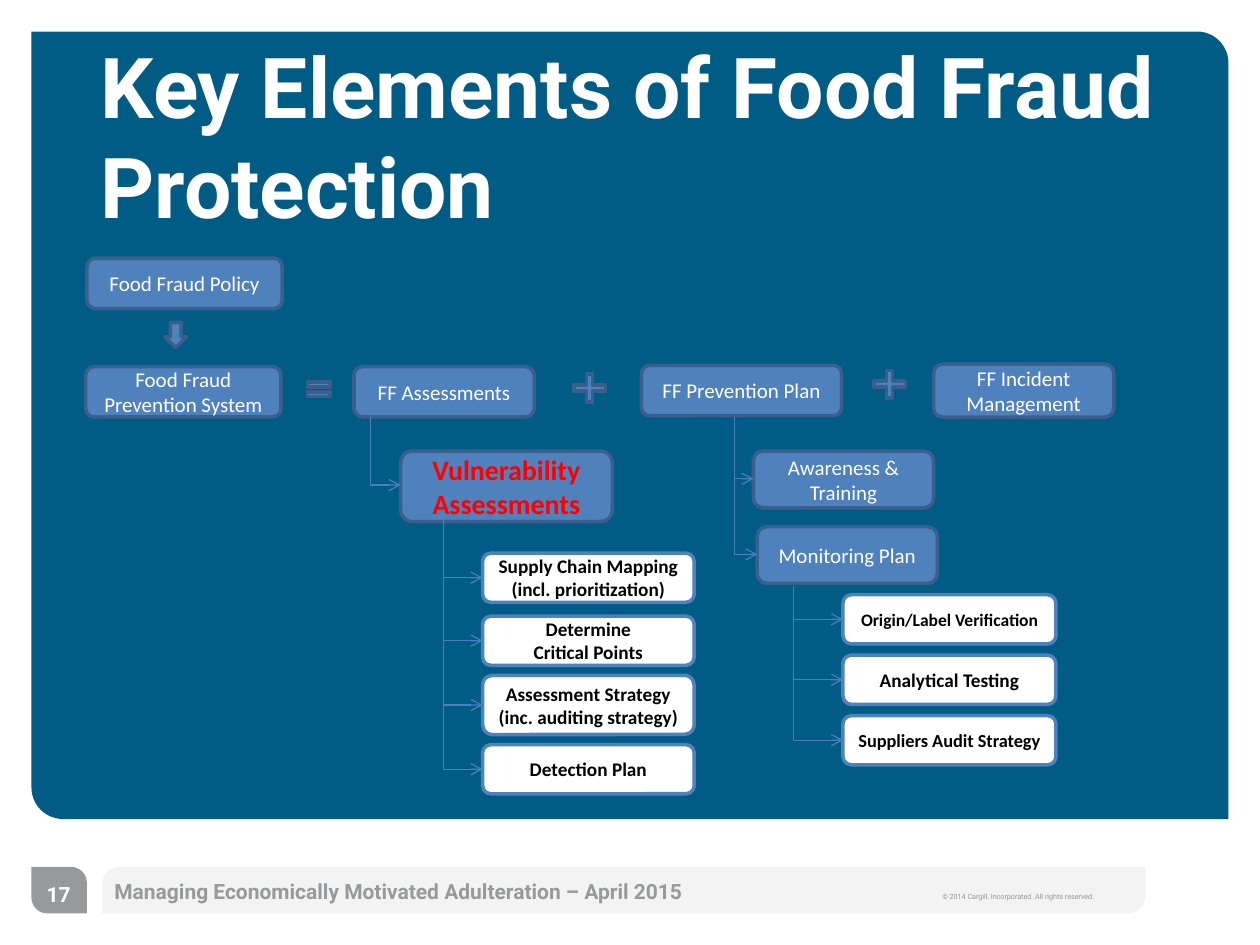
import pptx
import pptx.dml.color
import pptx.enum.shapes
import pptx.enum.text
import pptx.oxml.ns
import pptx.util
from lxml import etree
from pptx.util import Inches

SHAPE = pptx.enum.shapes.MSO_SHAPE
ALIGN = pptx.enum.text.PP_ALIGN
ANCHOR = pptx.enum.text.MSO_ANCHOR
qn = pptx.oxml.ns.qn

COLORS = {
    "panel": "005C84",
    "footer": "D0D0D0",
    "gray": "97999B",
    "copyright": "959595",
    "box": "4F81BD",
    "box_edge": "3A5F8C",
    "arrow": "4B7EBC",
    "white": "FFFFFF",
    "black": "000000",
    "red": "FF0000",
}


def rgb(name):
    return pptx.dml.color.RGBColor.from_string(COLORS[name])


def write_text(frame, text, size=12, color="white", font="Calibri", bold=False,
               align=ALIGN.CENTER, anchor=ANCHOR.MIDDLE, wrap=True, baseline=None):
    frame.word_wrap = wrap
    frame.auto_size = pptx.enum.text.MSO_AUTO_SIZE.NONE
    frame.vertical_anchor = anchor
    frame.text = text
    for paragraph in frame.paragraphs:
        paragraph.alignment = align
        for run in paragraph.runs:
            run.font.name = font
            run.font.size = pptx.util.Pt(size)
            run.font.bold = bold
            run.font.color.rgb = rgb(color)
            if baseline:
                run.font._element.set("baseline", str(baseline))


def add_block(slide, kind, place, fill, edge=None, adjust=()):
    block = slide.shapes.add_shape(kind, *map(Inches, place))
    block.shadow.inherit = False
    for index, value in enumerate(adjust):
        block.adjustments[index] = value
    block.fill.solid()
    block.fill.fore_color.rgb = rgb(fill)
    if edge:
        block.line.color.rgb = rgb(edge)
        block.line.width = pptx.util.Pt(2)
    else:
        block.line.fill.background()
    return block


def add_element(slide, text, place, **text_format):
    box = add_block(slide, SHAPE.ROUNDED_RECTANGLE, place, "box", "box_edge")
    write_text(box.text_frame, text, **text_format)


def add_detail(slide, text, place, size=11):
    box = add_block(slide, SHAPE.ROUNDED_RECTANGLE, place, "white", "box")
    write_text(box.text_frame, text, size=size, color="black", bold=True)


def add_label(slide, text, place, **text_format):
    label = slide.shapes.add_textbox(*map(Inches, place))
    write_text(label.text_frame, text, font="Roboto", **text_format)


def add_branch(slide, start, end):
    across, down = end[0] - start[0], end[1] - start[1]
    left = (start[0] + end[0] - down) / 2
    top = (start[1] + end[1] - across) / 2
    branch = slide.shapes.add_connector(
        pptx.enum.shapes.MSO_CONNECTOR.ELBOW,
        Inches(left), Inches(top), Inches(left + down), Inches(top + across))
    branch.line.color.rgb = rgb("arrow")
    branch.line.width = pptx.util.Pt(0.75)
    properties = branch._element.spPr
    frame = properties.find(qn("a:xfrm"))
    frame.set("rot", "16200000")
    frame.set("flipH", "1")
    properties.find(qn("a:prstGeom")).set("prst", "bentConnector2")
    etree.SubElement(properties.find(qn("a:ln")), qn("a:tailEnd"), type="arrow")
    etree.SubElement(properties, qn("a:effectLst"))


def add_footer(slide):
    bar = add_block(slide, SHAPE.ROUND_2_DIAG_RECTANGLE, (0.81, 6.88, 8.28, 0.37),
                    "footer", adjust=(0.38, 0))
    bar_color = bar._element.spPr.find(qn("a:solidFill"))[0]
    etree.SubElement(bar_color, qn("a:alpha"), val="25000")
    add_block(slide, SHAPE.ROUND_2_DIAG_RECTANGLE, (0.25, 6.88, 0.44, 0.37),
              "gray", adjust=(0, 0.34))
    add_label(slide, "© 2014 Cargill, Incorporated. All rights reserved.",
              (7.38, 7.02, 1.59, 0.22), size=7, color="copyright",
              align=ALIGN.LEFT, anchor=ANCHOR.TOP, wrap=False, baseline=30000)
    add_label(slide, "Managing Economically Motivated Adulteration – April 2015",
              (0.81, 6.87, 5.44, 0.4), color="gray", bold=True, align=ALIGN.LEFT)
    add_label(slide, "17", (0.26, 6.9, 0.41, 0.4), bold=True, wrap=False)


def add_title(slide):
    panel = add_block(slide, SHAPE.ROUND_2_DIAG_RECTANGLE, (0.25, 0.25, 9.5, 6.25),
                      "panel", adjust=(0, 0.04))
    title = slide.shapes.title
    panel._element.addnext(title._element)
    title.left, title.top, title.width, title.height = map(
        Inches, (0.8, 0.27, 8.71, 2.56))
    frame = title.text_frame
    frame.margin_left = frame.margin_right = frame.margin_top = frame.margin_bottom = 0
    write_text(frame, "Key Elements of Food Fraud Protection", size=48, font="Roboto",
               bold=True, align=ALIGN.LEFT, anchor=ANCHOR.TOP)


def add_system_row(slide):
    add_element(slide, "Food Fraud Policy", (0.69, 2.05, 1.55, 0.4))
    add_element(slide, "Food Fraud Prevention System", (0.68, 2.91, 1.55, 0.4))
    add_element(slide, "FF Assessments", (2.81, 2.91, 1.43, 0.4))
    add_element(slide, "FF Prevention Plan", (5.09, 2.9, 1.59, 0.4))
    add_element(slide, "FF Incident Management", (7.41, 2.89, 1.43, 0.42))
    for kind, place, adjust in (
        (SHAPE.DOWN_ARROW, (1.31, 2.56, 0.17, 0.2), ()),
        (SHAPE.MATH_EQUAL, (2.41, 3, 0.24, 0.18), (0.21, 0.22)),
        (SHAPE.MATH_PLUS, (4.51, 2.93, 0.34, 0.3), (0.16,)),
        (SHAPE.MATH_PLUS, (6.89, 2.9, 0.34, 0.3), (0.16,)),
    ):
        add_block(slide, kind, place, "box", "box_edge", adjust)


def add_detail_list(slide, trunk, left, width, details):
    for text, top, height, size in details:
        add_detail(slide, text, (left, top, width, height), size)
        add_branch(slide, trunk, (left, top + height / 2))


def add_assessments(slide):
    add_element(slide, "Vulnerability\vAssessments", (3.18, 3.58, 1.68, 0.56),
                size=16, color="red", bold=True)
    add_branch(slide, (2.94, 3.31), (3.18, 3.85))
    add_detail_list(slide, (3.52, 4.13), 3.83, 1.68, (
        ("Supply Chain Mapping\n(incl. prioritization)", 4.39, 0.39, 11),
        ("Determine\nCritical Points", 4.89, 0.39, 11),
        ("Assessment Strategy (inc. auditing strategy)", 5.36, 0.47, 11),
        ("Detection Plan", 5.91, 0.39, 11),
    ))


def add_prevention(slide):
    for text, left, top in (("Awareness & Training", 5.98, 3.58),
                            ("Monitoring Plan", 6.01, 4.18)):
        add_element(slide, text, (left, top, 1.43, 0.45))
        add_branch(slide, (5.83, 3.31), (left, top + 0.22))
    add_detail_list(slide, (6.3, 4.65), 6.69, 1.69, (
        ("Origin/Label Verification", 4.72, 0.39, 10),
        ("Analytical Testing", 5.2, 0.39, 11),
        ("Suppliers Audit Strategy", 5.68, 0.39, 10.5),
    ))


def main():
    deck = pptx.Presentation()
    deck.slide_width = Inches(10)
    deck.slide_height = Inches(7.5)
    slide = deck.slides.add_slide(deck.slide_layouts[5])
    add_footer(slide)
    add_title(slide)
    add_system_row(slide)
    add_assessments(slide)
    add_prevention(slide)
    deck.save("out.pptx")


if __name__ == "__main__":
    main()
